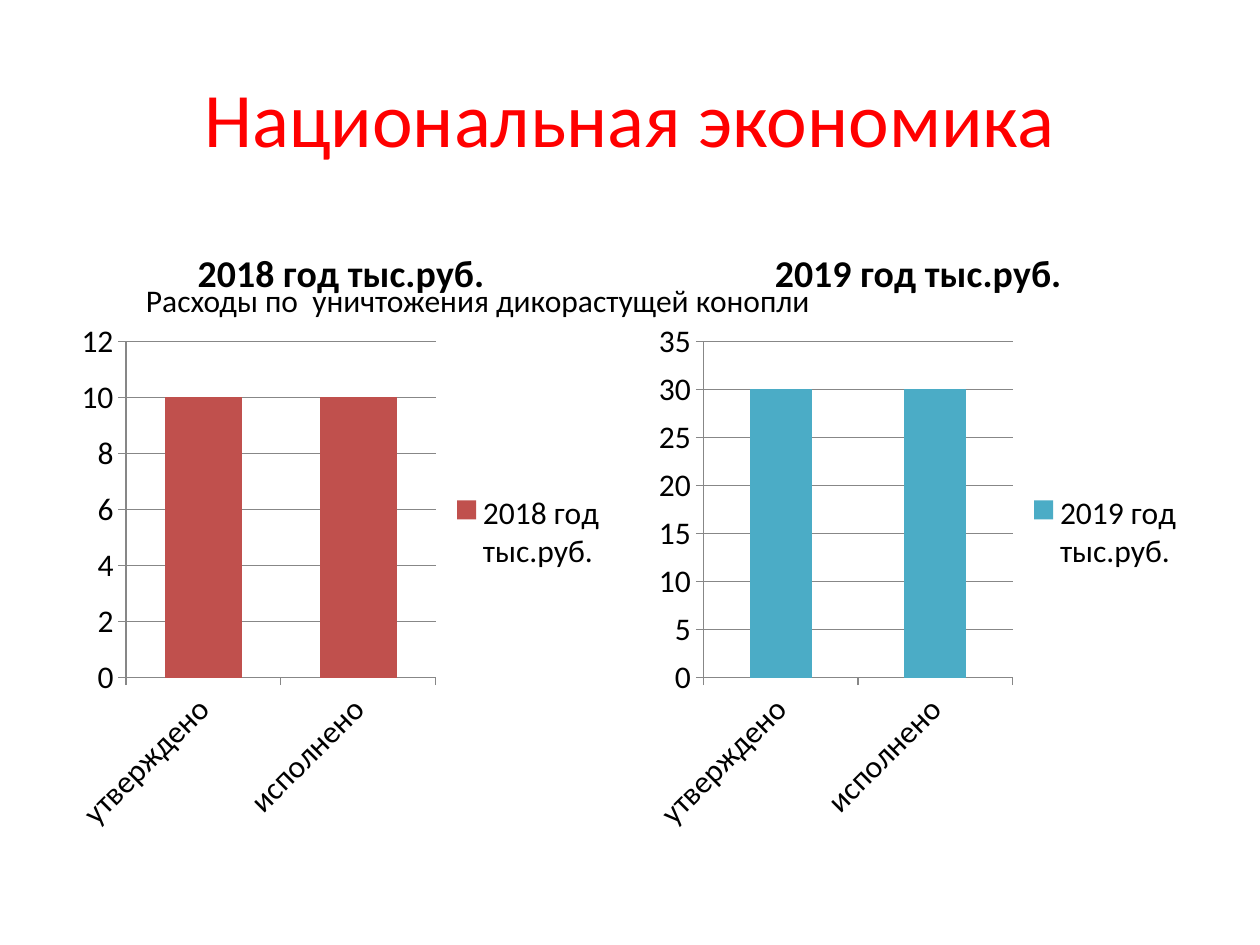
import pptx
import pptx.chart.data
import pptx.dml.color
import pptx.enum.chart
import pptx.enum.text
import pptx.util

COLOURS = {
    "title": "FF0000",
    "text": "000000",
    "axis": "878787",
    "2018": "C0504D",
    "2019": "4BACC6",
}
FONT = "Calibri"
WIDTH, HEIGHT = 10, 7.5
MARGIN, GUTTER = 0.5, 0.16
COLUMN = (WIDTH - 2 * MARGIN - GUTTER) / 2
CHART_TOP, CHART_HEIGHT = 1.75, 4.95


def colour(name):
    return pptx.dml.color.RGBColor.from_string(COLOURS[name])


def frame(left, top, width, height):
    return [pptx.util.Inches(length) for length in (left, top, width, height)]


def place(shape, left, top, width, height):
    shape.left, shape.top, shape.width, shape.height = frame(left, top, width, height)


def style_font(font, size, name="text", bold=False):
    font.name = FONT
    font.size = pptx.util.Pt(size)
    font.bold = bold
    font.color.rgb = colour(name)


def add_run(para, text, size, name="text", bold=False):
    span = para.add_run()
    span.text = text
    style_font(span.font, size, name, bold)


def add_title(page, text):
    title = page.shapes.title
    place(title, MARGIN, 0.3, WIDTH - 2 * MARGIN, 1.25)
    title.text_frame.vertical_anchor = pptx.enum.text.MSO_ANCHOR.MIDDLE
    para = title.text_frame.paragraphs[0]
    para.alignment = pptx.enum.text.PP_ALIGN.CENTER
    add_run(para, text, 44, "title")


def add_caption(page, text):
    box = page.shapes.add_textbox(*frame(1.06, 2.18, 5.68, 0.4))
    box.text_frame.word_wrap = False
    box.text_frame.auto_size = pptx.enum.text.MSO_AUTO_SIZE.SHAPE_TO_FIT_TEXT
    add_run(box.text_frame.paragraphs[0], text, 18)


def style_axis(axis):
    axis.major_tick_mark = pptx.enum.chart.XL_TICK_MARK.OUTSIDE
    axis.minor_tick_mark = pptx.enum.chart.XL_TICK_MARK.NONE
    axis.format.line.color.rgb = colour("axis")
    axis.format.line.width = pptx.util.Pt(0.75)


def add_year_chart(page, column, year, kind, value, top_value, step, gap):
    name = f"{year} год тыс.руб."
    values = pptx.chart.data.CategoryChartData()
    values.categories = ["утверждено", "исполнено"]
    values.add_series(name, [value, value])
    left = MARGIN + column * (COLUMN + GUTTER)
    chart = page.shapes.add_chart(
        kind, *frame(left, CHART_TOP, COLUMN, CHART_HEIGHT), values
    ).chart
    style_font(chart.font, 18)

    chart.has_title = True
    add_run(chart.chart_title.text_frame.paragraphs[0], name, 21.6, bold=True)
    chart.chart_title.include_in_layout = False
    chart.has_legend = True
    chart.legend.position = pptx.enum.chart.XL_LEGEND_POSITION.RIGHT
    chart.legend.include_in_layout = False

    style_axis(chart.category_axis)
    axis = chart.value_axis
    style_axis(axis)
    axis.minimum_scale, axis.maximum_scale, axis.major_unit = 0, top_value, step
    axis.has_major_gridlines = True
    axis.major_gridlines.format.line.color.rgb = colour("axis")
    axis.major_gridlines.format.line.width = pptx.util.Pt(0.75)

    plot = chart.plots[0]
    plot.vary_by_categories = False
    plot.gap_width = gap
    bars = plot.series[0]
    bars.format.fill.solid()
    bars.format.fill.fore_color.rgb = colour(year)


def main():
    deck = pptx.Presentation()
    deck.slide_width = pptx.util.Inches(WIDTH)
    deck.slide_height = pptx.util.Inches(HEIGHT)
    page = deck.slides.add_slide(deck.slide_layouts.get_by_name("Title Only"))
    kinds = pptx.enum.chart.XL_CHART_TYPE

    add_title(page, "Национальная экономика")
    add_year_chart(page, 0, "2018", kinds.COLUMN_STACKED, 10, 12, 2, 100)
    add_year_chart(page, 1, "2019", kinds.COLUMN_CLUSTERED, 30, 35, 5, 150)
    add_caption(page, "Расходы по  уничтожения дикорастущей конопли")
    deck.save("out.pptx")


if __name__ == "__main__":
    main()
